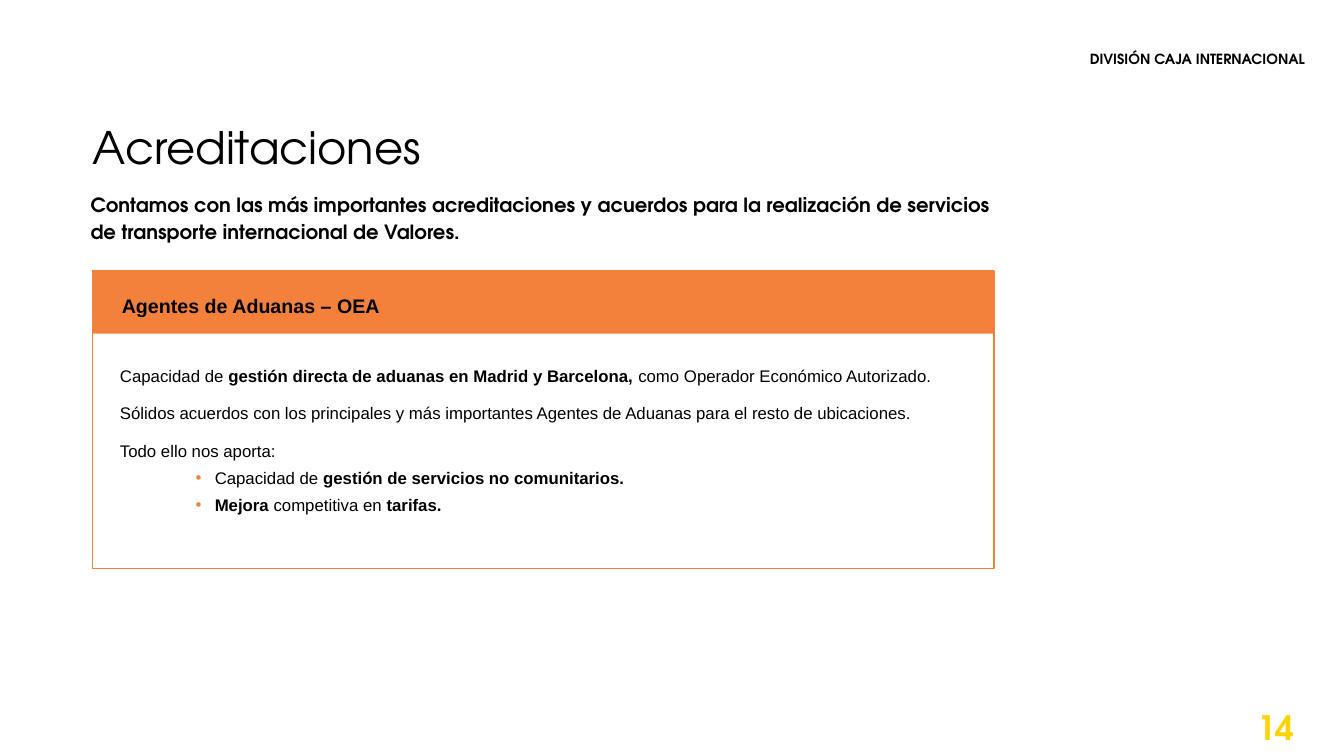
from lxml import etree
from pptx import Presentation
from pptx.dml.color import RGBColor
from pptx.enum.shapes import MSO_SHAPE as SHAPE
from pptx.enum.text import MSO_ANCHOR as ANCHOR, PP_ALIGN as ALIGN
from pptx.oxml.ns import qn
from pptx.util import Inches, Pt

COLORS = {"text": "000000", "accent": "F3813C", "page": "FFD300", "white": "FFFFFF"}
HEAD, BODY = "TeX Gyre Adventor", "Arial"


def add_text(box, paragraphs, size, font, color="text", inset=0.0,
             align=ALIGN.LEFT, spacing=1.0, anchor=ANCHOR.TOP):
    """Add a text box; each paragraph is a list of (text, bold) runs."""
    tf = s.shapes.add_textbox(*map(Inches, box)).text_frame
    tf.word_wrap = True
    tf.vertical_anchor = anchor
    tf.margin_left = tf.margin_right = Inches(inset)
    tf.margin_top = tf.margin_bottom = Inches(inset / 2)
    for i, runs in enumerate(paragraphs):
        p = tf.add_paragraph() if i else tf.paragraphs[0]
        p.alignment = align
        p.line_spacing = spacing
        for text, bold in runs:
            r = p.add_run()
            r.text = text
            r.font.name, r.font.size, r.font.bold = font, Pt(size), bold
            r.font.color.rgb = RGBColor.from_string(COLORS[color])
    return tf


def add_bullet(p):
    pPr = p._p.get_or_add_pPr()
    pPr.set("marL", str(Inches(0.94)))
    pPr.set("indent", str(Inches(-0.19)))
    bu_color = etree.SubElement(pPr, qn("a:buClr"))
    etree.SubElement(bu_color, qn("a:srgbClr"), val=COLORS["accent"])
    etree.SubElement(pPr, qn("a:buFont"), typeface=BODY)
    etree.SubElement(pPr, qn("a:buChar"), char="•")


prs = Presentation()
prs.slide_width, prs.slide_height = Inches(13.33), Inches(7.5)
s = prs.slides.add_slide(prs.slide_layouts[6])
accent = RGBColor.from_string(COLORS["accent"])

# Card: header band and outlined frame
left, top, width = 0.92, 2.69, 8.94
band, frame = [
    s.shapes.add_shape(SHAPE.RECTANGLE, *map(Inches, (left, top, width, height)))
    for height in (0.62, 2.95)
]
band.fill.solid()
band.fill.fore_color.rgb = accent
band.line.fill.background()
frame.fill.background()
frame.line.color.rgb = accent
frame.line.width = Pt(1)
for sp in (band, frame):
    sp.shadow.inherit = False

# Headings
add_text((left, 1.25, 7.38, 0.48), [[("Acreditaciones", False)]], 32, HEAD, spacing=0.9)
add_text((3, 0.52, 9.94, 0.15), [[("DIVISIÓN CAJA INTERNACIONAL", True)]], 10, HEAD,
         align=ALIGN.RIGHT, spacing=0.9)
add_text((0.8, 1.83, 9.34, 0.62),
         [[("Contamos con las más importantes acreditaciones y acuerdos para la "
            "realización de servicios de transporte internacional de Valores.", True)]],
         14, HEAD, inset=0.1, spacing=1.15)
add_text((1.11, 2.83, 3.59, 0.35), [[("Agentes de Aduanas – OEA", True)]], 14, BODY,
         inset=0.1, align=ALIGN.JUSTIFY, spacing=1.15)

# Card text: three statements, then the bulleted benefits
statements = [
    [("Capacidad de ", False),
     ("gestión directa de aduanas en Madrid y Barcelona, ", True),
     ("como Operador Económico Autorizado.", False)],
    [("Sólidos acuerdos con los principales y más importantes Agentes de Aduanas "
      "para el resto de ubicaciones.", False)],
    [("Todo ello nos aporta:", False)],
]
benefits = [
    [("Capacidad de ", False), ("gestión de servicios no comunitarios.", True)],
    [("Mejora ", True), ("competitiva en ", False), ("tarifas.", True)],
]
tf = add_text((1.19, 3.6, 8.27, 2.65), statements + benefits, 12, BODY, spacing=1.15)
for p in tf.paragraphs[1:len(statements)]:
    p.space_before = Pt(10)
for p in tf.paragraphs[len(statements):]:
    p.level = 1
    p.line_spacing = 1.0
    p.space_before = Pt(5)
    add_bullet(p)

# Page number
add_text((11.94, 7.06, 1, 0.3), [[("14", True)]], 24, HEAD, color="page", inset=0.1,
         align=ALIGN.RIGHT, anchor=ANCHOR.MIDDLE)

prs.save("out.pptx")
